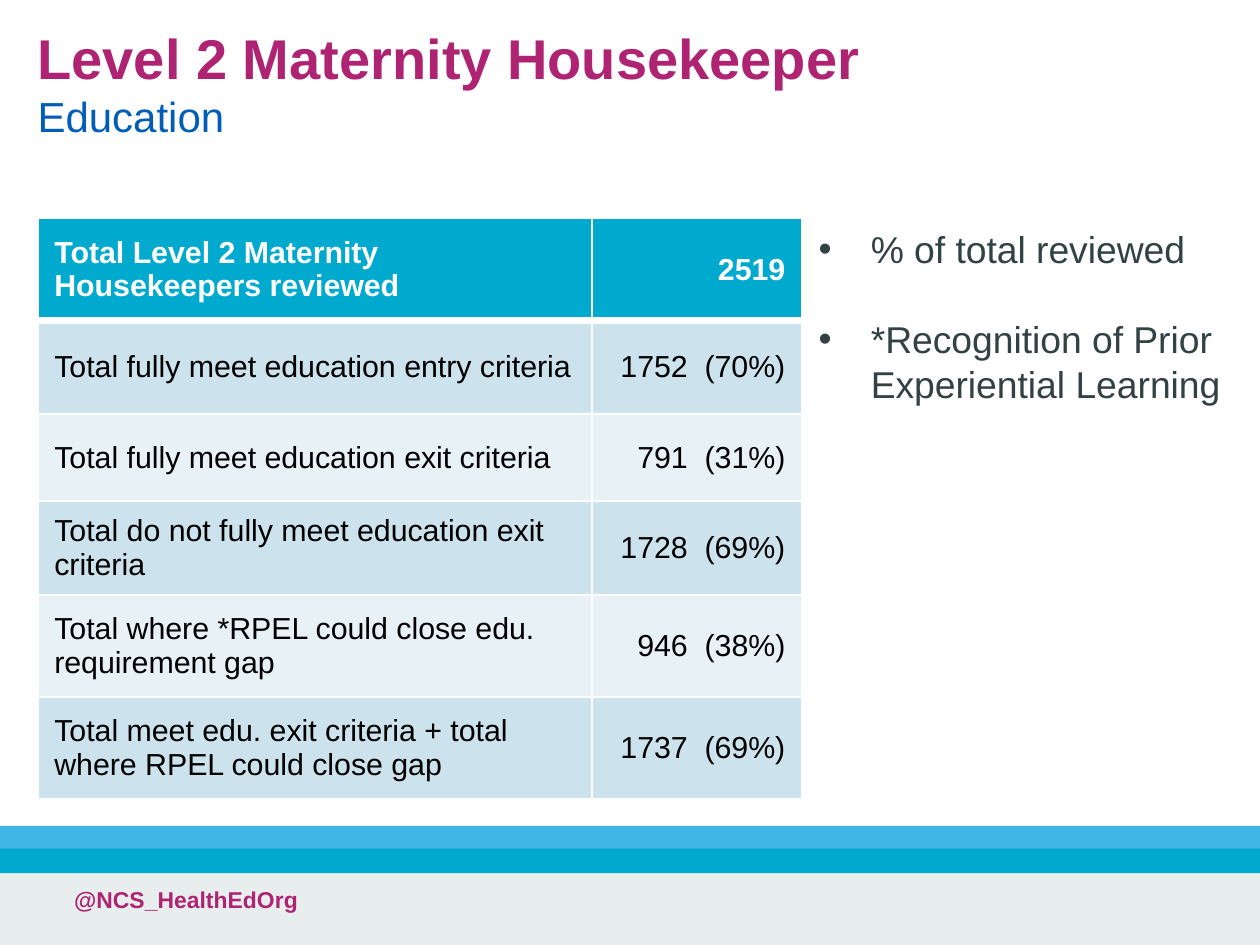
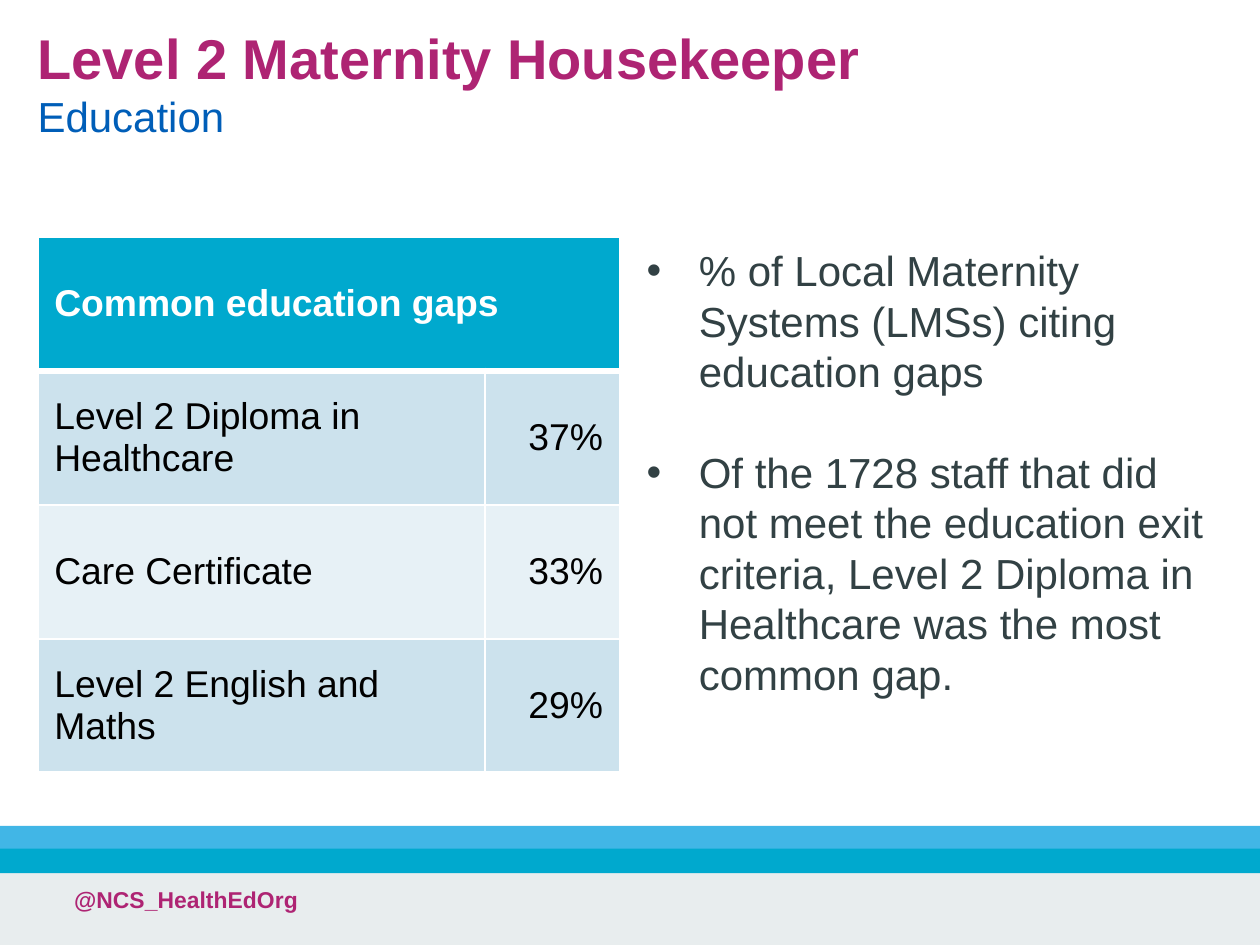
from lxml import etree
from pptx import Presentation
from pptx.dml.color import RGBColor
from pptx.enum.shapes import MSO_SHAPE
from pptx.enum.text import MSO_ANCHOR, MSO_AUTO_SIZE, PP_ALIGN
from pptx.oxml.ns import qn
from pptx.util import Inches, Pt

RECT = MSO_SHAPE.RECTANGLE
TOP, MID = MSO_ANCHOR.TOP, MSO_ANCHOR.MIDDLE
LEFT, RIGHT = PP_ALIGN.LEFT, PP_ALIGN.RIGHT
FIXED, GROW = MSO_AUTO_SIZE.NONE, MSO_AUTO_SIZE.SHAPE_TO_FIT_TEXT

WIDE = Inches(7.5)
HIGH = WIDE * 3 // 4
FONT = "Arial"
HUES = {
    "plum": "AE2473", "blue": "005EB8", "sky": "41B6E6", "teal": "00A9CE",
    "mist": "E8EDEE", "slate": "324144", "odd": "CCE2ED", "even": "E7F1F6",
    "white": "FFFFFF", "black": "000000",
}
BANDS = [("mist", 92.4, 7.6), ("sky", 87.4, 2.5), ("teal", 89.8, 2.6)]
HEAD = (2.98, 2.5, 89.5, 14.4)
FOOT = (4.56, 92.9, 58.4, 7.1)

PAGES = [
    {
        "grid": (2.98, 23.12, 60.67, 61.5),
        "cols": [330, 125],
        "rows": [61, 56, 52, 56, 61, 61],
        "size": 13,
        "cells": [
            ("Total Level 2 Maternity Housekeepers reviewed", "2519"),
            ("Total fully meet education entry criteria", "1752  (70%)"),
            ("Total fully meet education exit criteria", "791  (31%)"),
            ("Total do not fully meet education exit criteria", "1728  (69%)"),
            ("Total where *RPEL could close edu. requirement gap", "946  (38%)"),
            ("Total meet edu. exit criteria + total where RPEL could close gap",
             "1737  (69%)"),
        ],
        "side": (63.65, 23.12, 36.35, 25),
        "notes": ["% of total reviewed",
                  "*Recognition of Prior Experiential Learning"],
        "text": 16,
    },
    {
        "grid": (2.98, 25.05, 46.2, 56.7),
        "cols": [267, 80],
        "rows": [1, 1, 1, 1],
        "size": 16,
        "cells": [
            ("Common education gaps",),
            ("Level 2 Diploma in Healthcare", "37%"),
            ("Care Certificate", "33%"),
            ("Level 2 English and Maths", "29%"),
        ],
        "side": (50, 25.05, 47.1, 50.4),
        "notes": [
            "% of Local Maternity Systems (LMSs) citing education gaps",
            "Of the 1728 staff that did not meet the education exit criteria, "
            "Level 2 Diploma in Healthcare was the most common gap.",
        ],
        "text": 18,
    },
]


def hue(name):
    return RGBColor.from_string(HUES[name])


def area(box):
    x, y, w, h = box
    return [int(part * full / 100)
            for part, full in ((x, WIDE), (y, HIGH), (w, WIDE), (h, HIGH))]


def style(run, size, name, bold=False):
    font = run.font
    font.name, font.size, font.bold = FONT, Pt(size), bold
    font.color.rgb = hue(name)


def add_title(slide, box):
    title = slide.shapes.title
    title.left, title.top, title.width, title.height = area(box)
    frame = title.text_frame
    frame.margin_left = frame.margin_right = 0
    frame.margin_top = frame.margin_bottom = 0
    frame.vertical_anchor, frame.auto_size = TOP, FIXED
    frame.word_wrap = True
    para = frame.paragraphs[0]
    para.text = "Level 2 Maternity Housekeeper\vEducation"
    para.alignment = LEFT
    name, topic = para.runs
    style(name, 24, "plum", True)
    style(topic, 18, "blue")


def add_foot(slide, box):
    for name, top, tall in BANDS:
        band = slide.shapes.add_shape(RECT, *area((0, top, 100, tall)))
        band.shadow.inherit = False
        band.fill.solid()
        band.fill.fore_color.rgb = hue(name)
        band.line.fill.background()
    frame = slide.shapes.add_textbox(*area(box)).text_frame
    frame.word_wrap = True
    frame.text = "@NCS_HealthEdOrg"
    style(frame.paragraphs[0].runs[0], 9.8, "plum", True)


def add_edge(cell, side, width):
    props = cell._tc.get_or_add_tcPr()
    line = etree.SubElement(props, qn("a:ln" + side), w=str(Pt(width)))
    fill = etree.SubElement(line, qn("a:solidFill"))
    etree.SubElement(fill, qn("a:srgbClr"), val=HUES["white"])


def fill_cell(cell, row, col, text, size):
    for side in "LRTB":
        thick = (row, side) in ((0, "B"), (1, "T"))
        add_edge(cell, side, 3 if thick else 1)
    cell.fill.solid()
    shade = "teal" if row == 0 else "odd" if row % 2 else "even"
    cell.fill.fore_color.rgb = hue(shade)
    cell.vertical_anchor = MID
    if text:
        cell.text = text
        para = cell.text_frame.paragraphs[0]
        para.alignment = RIGHT if col else LEFT
        style(para.runs[0], size, "black" if row else "white", row == 0)


def add_grid(slide, box, page):
    left, top, width, height = area(box)
    cols, rows, cells = page["cols"], page["rows"], page["cells"]
    table = slide.shapes.add_table(
        len(rows), len(cols), left, top, width, height).table
    table.horz_banding = False
    for col, share in zip(table.columns, cols):
        col.width = int(width * share / sum(cols))
    for row, share in zip(table.rows, rows):
        row.height = int(height * share / sum(rows))
    for r, texts in enumerate(cells):
        for c in range(len(cols)):
            text = texts[c] if c < len(texts) else ""
            fill_cell(table.cell(r, c), r, c, text, page["size"])
        if len(texts) < len(cols):
            table.cell(r, 0).merge(table.cell(r, len(cols) - 1))


def add_notes(slide, box, notes, size):
    frame = slide.shapes.add_textbox(*area(box)).text_frame
    frame.word_wrap, frame.auto_size = True, GROW
    frame.text = "\n".join(notes)
    hang = int(WIDE * 4.15 / 100)
    for i, para in enumerate(frame.paragraphs):
        para.space_before = Pt(size * 1.2 if i else 0)
        props = para._p.get_or_add_pPr()
        props.set("marL", str(hang))
        props.set("indent", str(-hang))
        etree.SubElement(props, qn("a:buFont"), typeface=FONT)
        etree.SubElement(props, qn("a:buChar"), char="•")
        style(para.runs[0], size, "slate")


def main():
    deck = Presentation()
    deck.slide_width, deck.slide_height = WIDE, HIGH
    for page in PAGES:
        slide = deck.slides.add_slide(deck.slide_layouts[5])
        add_foot(slide, FOOT)
        add_title(slide, HEAD)
        add_grid(slide, page["grid"], page)
        add_notes(slide, page["side"], page["notes"], page["text"])
    deck.save("out.pptx")


if __name__ == "__main__":
    main()
